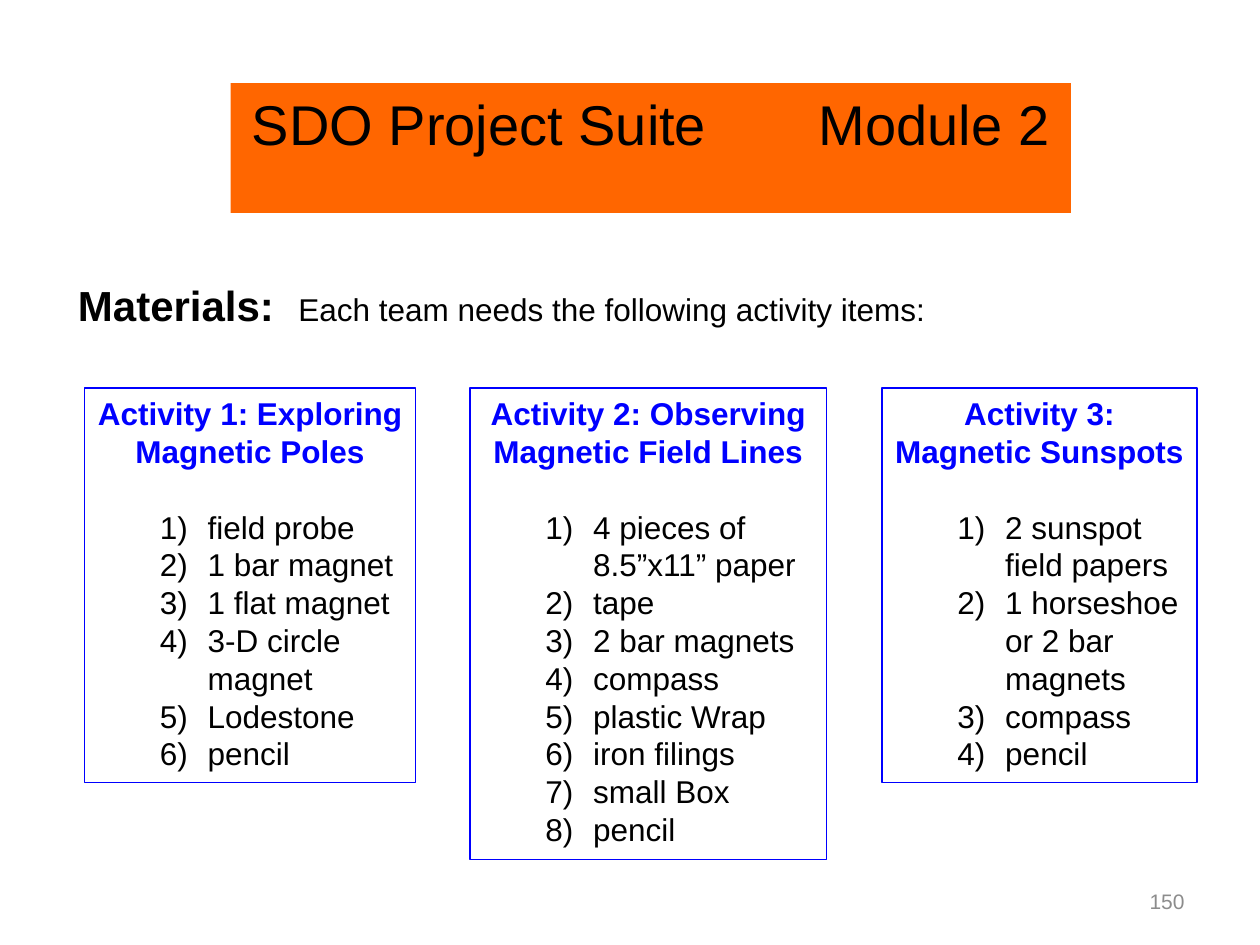
from dataclasses import dataclass
from typing import Optional

import pptx
import pptx.dml.color
import pptx.enum.shapes
import pptx.enum.text
import pptx.oxml.ns
import pptx.util
from lxml import etree

Inches = pptx.util.Inches
Pt = pptx.util.Pt
RGBColor = pptx.dml.color.RGBColor
Align = pptx.enum.text.PP_ALIGN
Anchor = pptx.enum.text.MSO_ANCHOR

ORANGE = RGBColor(0xFF, 0x66, 0x00)
BLUE = RGBColor(0x00, 0x00, 0xFF)
BLACK = RGBColor(0x00, 0x00, 0x00)
GRAY = RGBColor(0x8C, 0x8C, 0x8C)
FONT = "Arial"
CARD_TOP = 3.08


@dataclass
class Activity:
    heading: str
    items: list[str]
    left: float
    width: float
    height: float


ACTIVITIES = [
    Activity("Activity 1: Exploring Magnetic Poles",
             ["field probe", "1 bar magnet", "1 flat magnet",
              "3-D circle magnet", "Lodestone", "pencil"],
             0.67, 2.63, 3.13),
    Activity("Activity 2: Observing Magnetic Field Lines",
             ["4 pieces of 8.5”x11” paper", "tape", "2 bar magnets", "compass",
              "plastic Wrap", "iron filings", "small Box", "pencil"],
             3.73, 2.83, 3.74),
    Activity("Activity 3: Magnetic Sunspots",
             ["2 sunspot field papers", "1 horseshoe or 2 bar magnets",
              "compass", "pencil"],
             7, 2.5, 3.13),
]


def add_text(paragraph, text: str, *, size: float = 18, color: RGBColor = BLACK,
             bold: bool = False, align: Optional[Align] = None) -> None:
    """Append one formatted run to a paragraph."""
    if align is not None:
        paragraph.alignment = align
    run = paragraph.add_run()
    run.text = text
    run.font.name = FONT
    run.font.size = Pt(size)
    run.font.bold = bold
    run.font.color.rgb = color


def add_panel(slide, left: float, top: float, width: float, height: float, *,
              fill: Optional[RGBColor] = None, line: Optional[RGBColor] = None):
    """Draw a rectangle and return its text frame."""
    panel = slide.shapes.add_shape(
        pptx.enum.shapes.MSO_SHAPE.RECTANGLE,
        Inches(left), Inches(top), Inches(width), Inches(height))
    panel.shadow.inherit = False
    if fill is None:
        panel.fill.background()
    else:
        panel.fill.solid()
        panel.fill.fore_color.rgb = fill
    if line is None:
        panel.line.fill.background()
    else:
        panel.line.color.rgb = line
        panel.line.width = Pt(0.75)
    panel.text_frame.word_wrap = True
    panel.text_frame.vertical_anchor = Anchor.TOP
    return panel.text_frame


def add_label(slide, left: float, top: float, width: float, height: float):
    """Add a wrapping, vertically centred text box; return its first paragraph."""
    label = slide.shapes.add_textbox(
        Inches(left), Inches(top), Inches(width), Inches(height)).text_frame
    label.word_wrap = True
    label.vertical_anchor = Anchor.MIDDLE
    return label.paragraphs[0]


def add_property(parent, tag: str, **attributes: str):
    return etree.SubElement(parent, pptx.oxml.ns.qn(tag), attributes)


def number_item(paragraph) -> None:
    properties = paragraph._p.get_or_add_pPr()
    properties.set("marL", str(Inches(0.88)))
    properties.set("indent", str(Inches(-0.38)))
    add_property(properties, "a:buFont", typeface=FONT)
    add_property(properties, "a:buAutoNum", type="arabicParenR")
    paragraph.level = 1
    paragraph.alignment = Align.LEFT


def add_activity(slide, activity: Activity) -> None:
    card = add_panel(slide, activity.left, CARD_TOP, activity.width,
                     activity.height, line=BLUE)
    add_text(card.paragraphs[0], activity.heading, color=BLUE, bold=True,
             align=Align.CENTER)
    card.paragraphs[0].space_after = Pt(21.6)
    for item in activity.items:
        entry = card.add_paragraph()
        number_item(entry)
        add_text(entry, item)


def main() -> None:
    deck = pptx.Presentation()
    deck.slide_width = Inches(10)
    deck.slide_height = Inches(7.5)
    slide = deck.slides.add_slide(deck.slide_layouts[6])

    # Title banner
    banner = add_panel(slide, 1.83, 0.66, 6.67, 1.03, fill=ORANGE)
    add_text(banner.paragraphs[0], "SDO Project Suite\t\tModule 2", size=32,
             align=Align.CENTER)

    # Materials line, with a tab stop between label and sentence
    materials = add_label(slide, 0.52, 2, 8.75, 0.83)
    stops = add_property(materials._p.get_or_add_pPr(), "a:tabLst")
    add_property(stops, "a:tab", pos=str(Inches(1.75)), algn="l")
    add_text(materials, "Materials:\t", size=24, bold=True)
    add_text(materials, "Each team needs the following activity items:")

    # Activity cards
    for activity in ACTIVITIES:
        add_activity(slide, activity)

    # Page number
    page_number = add_label(slide, 7.17, 6.95, 2.33, 0.4)
    add_text(page_number, "150", size=12, color=GRAY, align=Align.RIGHT)

    deck.save("out.pptx")


if __name__ == "__main__":
    main()
